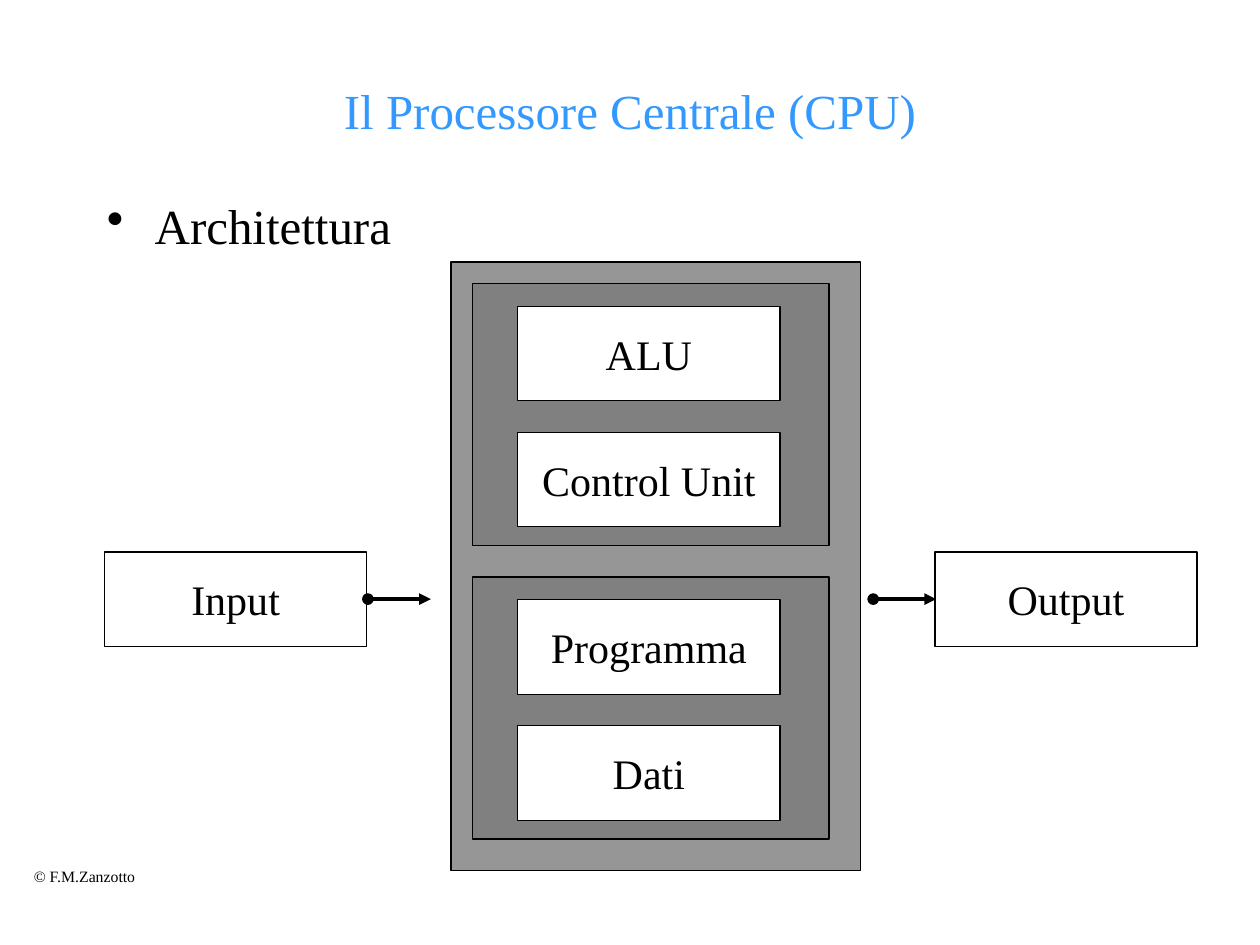
from lxml import etree
from pptx import Presentation
from pptx.dml.color import RGBColor
from pptx.enum.shapes import MSO_CONNECTOR, MSO_SHAPE
from pptx.enum.text import MSO_ANCHOR, PP_ALIGN
from pptx.oxml.ns import qn
from pptx.util import Inches, Pt

RECTANGLE, STRAIGHT = MSO_SHAPE.RECTANGLE, MSO_CONNECTOR.STRAIGHT
TOP, MIDDLE = MSO_ANCHOR.TOP, MSO_ANCHOR.MIDDLE
LEFT, CENTER = PP_ALIGN.LEFT, PP_ALIGN.CENTER

BLACK = RGBColor(0x00, 0x00, 0x00)
WHITE = RGBColor(0xFF, 0xFF, 0xFF)
BLUE = RGBColor(0x33, 0x99, 0xFF)
LIGHT_GRAY = RGBColor(0x96, 0x96, 0x96)
DARK_GRAY = RGBColor(0x80, 0x80, 0x80)
FONT = "Times New Roman"

# Content
TITLE = "Il Processore Centrale (CPU)"
BULLET = "Architettura"
COPYRIGHT = "© F.M.Zanzotto"
UNITS = [["ALU", "Control Unit"], ["Programma", "Dati"]]
DEVICES = [("Input", 0.83), ("Output", 7.42)]  # name, left
ARROW_STARTS = [2.92, 6.93]

# Layout in inches
SLIDE_WIDTH, SLIDE_HEIGHT = 10, 7.5
MARGIN = 0.75
TEXT_WIDTH = SLIDE_WIDTH - 2 * MARGIN
CPU = (3.58, 2.08, 3.25, 4.83)
GROUP_LEFT, GROUP_TOP, GROUP_WIDTH, GROUP_HEIGHT = 3.75, 2.25, 2.83, 2.08
GROUP_STEP = 2.33
UNIT_WIDTH, UNIT_HEIGHT, UNIT_STEP = 2.08, 0.75, 1
UNIT_INDENT, UNIT_DROP = 0.36, 0.18
DEVICE_TOP, ARROW_LENGTH = 4.38, 0.5


def write(frame, text, size, color=BLACK, align=LEFT, anchor=TOP, wrap=True, bullet=None):
    frame.word_wrap = wrap
    frame.vertical_anchor = anchor
    para = frame.paragraphs[0]
    para.alignment = align
    if bullet:
        properties = para._p.get_or_add_pPr()
        properties.set("marL", str(Inches(0.38)))
        properties.set("indent", str(Inches(-0.38)))
        etree.SubElement(properties, qn("a:buChar")).set("char", bullet)
    span = para.add_run()
    span.text = text
    span.font.name, span.font.size = FONT, Pt(size)
    span.font.color.rgb = color


def add_text(slide, place, text, size, **style):
    box = slide.shapes.add_textbox(*map(Inches, place))
    write(box.text_frame, text, size, **style)


def add_box(slide, place, fill, text=None):
    box = slide.shapes.add_shape(RECTANGLE, *map(Inches, place))
    box.shadow.inherit = False
    box.fill.solid()
    box.fill.fore_color.rgb = fill
    box.line.color.rgb = BLACK
    box.line.width = Pt(0.75)
    if text:
        write(box.text_frame, text, 24, align=CENTER, anchor=MIDDLE, wrap=False)


def add_arrow(slide, left, top):
    ends = map(Inches, (left, top, left + ARROW_LENGTH, top))
    arrow = slide.shapes.add_connector(STRAIGHT, *ends)
    arrow.line.color.rgb = BLACK
    arrow.line.width = Pt(2.25)
    line = arrow.line._get_or_add_ln()
    for tag, kind in (("a:headEnd", "oval"), ("a:tailEnd", "triangle")):
        etree.SubElement(line, qn(tag)).set("type", kind)
    etree.SubElement(arrow._element.spPr, qn("a:effectLst"))


def main():
    deck = Presentation()
    deck.slide_width, deck.slide_height = Inches(SLIDE_WIDTH), Inches(SLIDE_HEIGHT)
    page = deck.slides.add_slide(deck.slide_layouts[6])

    # Copyright, processor background and headings
    add_text(page, (0.17, 6.83, 1.02, 0.25), COPYRIGHT, 9, wrap=False)
    add_box(page, CPU, LIGHT_GRAY)
    add_text(page, (MARGIN, 0.5, TEXT_WIDTH, 0.75), TITLE, 28,
             color=BLUE, align=CENTER, anchor=MIDDLE)
    add_text(page, (MARGIN, 1.5, TEXT_WIDTH, 5.17), BULLET, 28, bullet="•")

    # Processing and memory groups with their units
    for row, names in enumerate(UNITS):
        top = GROUP_TOP + row * GROUP_STEP
        add_box(page, (GROUP_LEFT, top, GROUP_WIDTH, GROUP_HEIGHT), DARK_GRAY)
        for index, name in enumerate(names):
            place = (GROUP_LEFT + UNIT_INDENT, top + UNIT_DROP + index * UNIT_STEP,
                     UNIT_WIDTH, UNIT_HEIGHT)
            add_box(page, place, WHITE, name)

    # Input and output devices with arrows
    for name, left in DEVICES:
        add_box(page, (left, DEVICE_TOP, UNIT_WIDTH, UNIT_HEIGHT), WHITE, name)
    for left in ARROW_STARTS:
        add_arrow(page, left, DEVICE_TOP + UNIT_HEIGHT / 2)

    deck.save("out.pptx")


if __name__ == "__main__":
    main()
